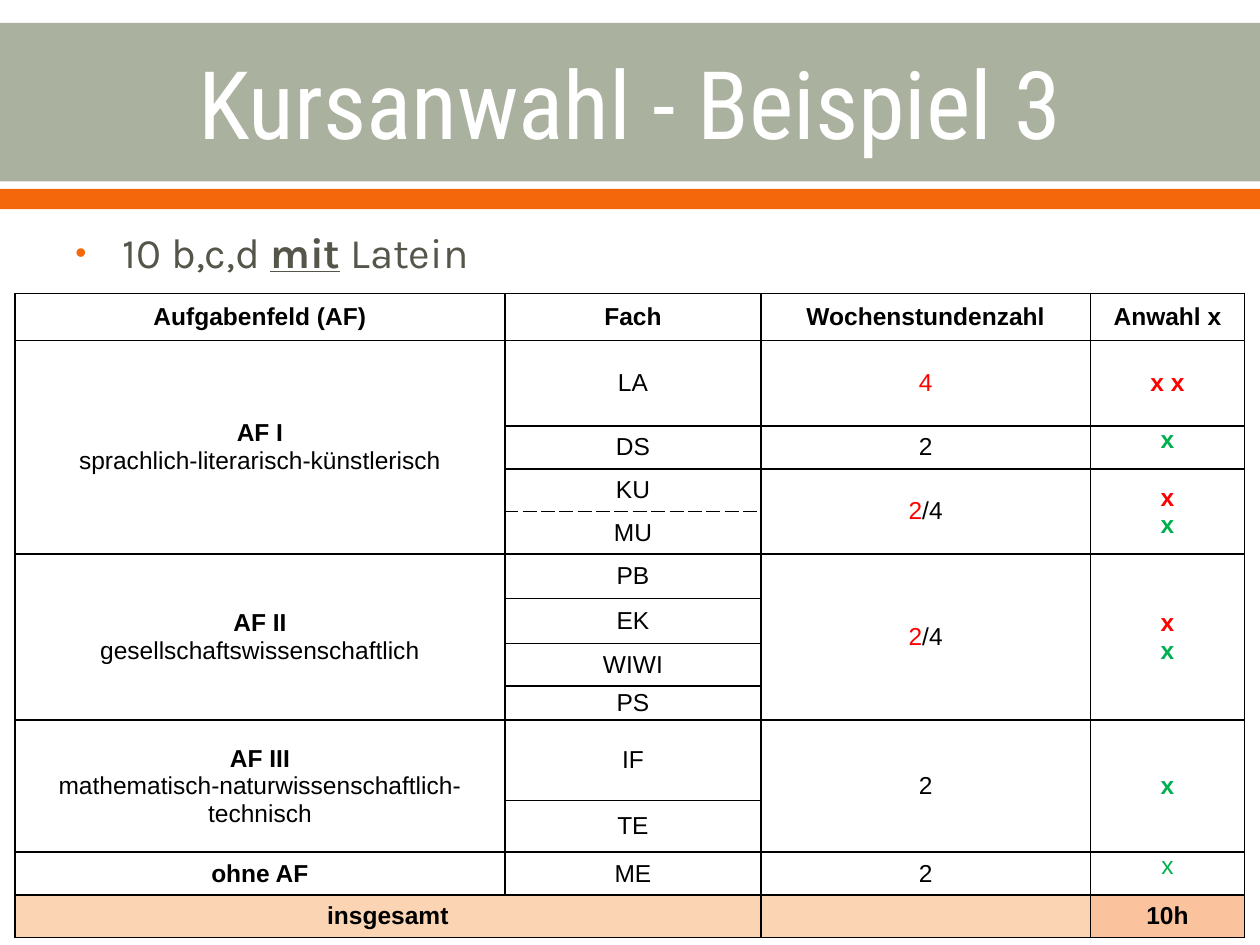
from lxml import etree
from pptx import Presentation
from pptx.dml.color import RGBColor
from pptx.enum.shapes import MSO_SHAPE
from pptx.enum.text import MSO_ANCHOR, PP_ALIGN
from pptx.oxml.ns import qn
from pptx.util import Cm, Pt

RECT = MSO_SHAPE.RECTANGLE
TOP, MIDDLE = MSO_ANCHOR.TOP, MSO_ANCHOR.MIDDLE
LEFT, CENTER = PP_ALIGN.LEFT, PP_ALIGN.CENTER

THEME = {
    "band": "ABB19F", "accent": "F4680B", "title": "FFFFFF", "body": "55554A",
    "text": "000000", "red": "FF0000", "green": "00B050",
    "total": "FBD4B4", "hours": "FBC39D",
    "title_font": "Roboto Condensed", "body_font": "Karla", "table_font": "Arial",
    "title_size": 54, "body_size": 24, "table_size": 14, "border": 1,
}

# A paragraph is a list of (text, format) runs.
PLAIN, BOLD = {}, {"bold": True}
RED = {"color": "red"}
RED_X = ("x", {"color": "red", "bold": True})
GREEN_X = ("x", {"color": "green", "bold": True})

TITLE = "Kursanwahl - Beispiel 3"
CLASSES = [("10 b,c,d ", PLAIN), ("mit", {"bold": True, "underline": True}), (" Latein", PLAIN)]

HEADERS = ["Aufgabenfeld (AF)", "Fach", "Wochenstundenzahl", "Anwahl x"]
SUBJECTS = ["LA", "DS", "KU", "MU", "PB", "EK", "WIWI", "PS", "IF", "TE", "ME"]
# (first row, row span, paragraphs)
FIELDS = [
    (1, 4, [[("AF I", BOLD)], [("sprachlich-literarisch-künstlerisch", PLAIN)]]),
    (5, 4, [[("AF II", BOLD)], [("gesellschaftswissenschaftlich", PLAIN)]]),
    (9, 2, [[("AF III", BOLD)], [("mathematisch-naturwissenschaftlich-", PLAIN)],
            [("technisch", PLAIN)]]),
    (11, 1, [[("ohne AF", BOLD)]]),
]
# (first row, row span, weekly hours, choice paragraphs, choice anchor)
TWO_OR_FOUR = [("2", RED), ("/4", PLAIN)]
CHOICES = [
    (1, 1, [("4", RED)], [[("x x", {"color": "red", "bold": True})]], MIDDLE),
    (2, 1, [("2", PLAIN)], [[GREEN_X]], TOP),
    (3, 2, TWO_OR_FOUR, [[RED_X], [GREEN_X]], MIDDLE),
    (5, 4, TWO_OR_FOUR, [[RED_X], [GREEN_X]], MIDDLE),
    (9, 2, [("2", PLAIN)], [[GREEN_X]], MIDDLE),
    (11, 1, [("2", PLAIN)], [[("x", {"color": "green"})]], TOP),
]
TOTAL_ROW = 12
DASHED = {(3, 1): "lnB", (4, 1): "lnT"}

COL_WIDTHS = [9.88, 5.16, 6.64, 3.11]
ROW_HEIGHTS = [0.94, 1.73, 0.86, 0.86, 0.86, 0.9, 0.9, 0.86, 0.69, 1.62, 1.04, 0.86, 0.86]


def rgb(name):
    return RGBColor.from_string(THEME[name])


def write(tf, paragraphs, role="table", color="text", align=CENTER, anchor=MIDDLE):
    tf.word_wrap = True
    tf.vertical_anchor = anchor
    for i, runs in enumerate(paragraphs):
        p = tf.add_paragraph() if i else tf.paragraphs[0]
        p.alignment = align
        for text, fmt in runs:
            r = p.add_run()
            r.text = text
            r.font.name = THEME[role + "_font"]
            r.font.size = Pt(THEME[role + "_size"])
            r.font.bold = fmt.get("bold", False)
            r.font.underline = fmt.get("underline", False)
            r.font.color.rgb = rgb(fmt.get("color", color))


def add_band(slide, top, height, color):
    sp = slide.shapes.add_shape(RECT, 0, Cm(top), Cm(25.4), Cm(height))
    sp.shadow.inherit = False
    sp.fill.solid()
    sp.fill.fore_color.rgb = rgb(color)
    sp.line.fill.background()


def add_bullet(p):
    pPr = p._p.get_or_add_pPr()
    pPr.set("marL", str(Cm(0.95)))
    pPr.set("indent", str(-Cm(0.95)))
    color = etree.SubElement(pPr, qn("a:buClr"))
    etree.SubElement(color, qn("a:srgbClr"), val=THEME["accent"])
    etree.SubElement(pPr, qn("a:buSzPct"), val="75000")
    etree.SubElement(pPr, qn("a:buFont"), typeface="Arial")
    etree.SubElement(pPr, qn("a:buChar"), char="•")


def add_borders(cell, dashed_side):
    tcPr = cell._tc.get_or_add_tcPr()
    for i, side in enumerate(("lnL", "lnR", "lnT", "lnB")):
        ln = etree.Element(qn("a:" + side), w=str(Pt(THEME["border"])))
        fill = etree.SubElement(ln, qn("a:solidFill"))
        etree.SubElement(fill, qn("a:srgbClr"), val=THEME["text"])
        dash = "dash" if side == dashed_side else "solid"
        etree.SubElement(ln, qn("a:prstDash"), val=dash)
        tcPr.insert(i, ln)


def format_cells(table):
    for row in range(len(ROW_HEIGHTS)):
        for col in range(len(COL_WIDTHS)):
            cell = table.cell(row, col)
            cell.margin_left = cell.margin_right = Cm(0.18)
            cell.margin_top = cell.margin_bottom = 0
            if row == TOTAL_ROW:
                cell.fill.solid()
                cell.fill.fore_color.rgb = rgb("hours" if col == 3 else "total")
            else:
                cell.fill.background()
            add_borders(cell, DASHED.get((row, col)))
            p = cell.text_frame.paragraphs[0]
            if not p.runs:
                size = str(THEME["table_size"] * 100)
                etree.SubElement(p._p, qn("a:endParaRPr"), sz=size)


def fill_cell(table, row, col, paragraphs, rows=1, cols=1, anchor=MIDDLE):
    cell = table.cell(row, col)
    if rows * cols > 1:
        cell.merge(table.cell(row + rows - 1, col + cols - 1))
    write(cell.text_frame, paragraphs)
    cell.vertical_anchor = anchor


def add_course_table(slide):
    frame = slide.shapes.add_table(
        len(ROW_HEIGHTS), len(COL_WIDTHS), Cm(0.3), Cm(5.92),
        Cm(sum(COL_WIDTHS)), Cm(sum(ROW_HEIGHTS)))
    table = frame.table
    table.first_row = table.horz_banding = False
    for column, width in zip(table.columns, COL_WIDTHS):
        column.width = Cm(width)
    for row, height in zip(table.rows, ROW_HEIGHTS):
        row.height = Cm(height)

    for col, header in enumerate(HEADERS):
        fill_cell(table, 0, col, [[(header, BOLD)]])
    for row, subject in enumerate(SUBJECTS, 1):
        fill_cell(table, row, 1, [[(subject, PLAIN)]])
    for row, span, paragraphs in FIELDS:
        fill_cell(table, row, 0, paragraphs, rows=span)
    for row, span, hours, choice, anchor in CHOICES:
        fill_cell(table, row, 2, [hours], rows=span)
        fill_cell(table, row, 3, choice, rows=span, anchor=anchor)
    fill_cell(table, TOTAL_ROW, 0, [[("insgesamt", BOLD)]], cols=2)
    fill_cell(table, TOTAL_ROW, 3, [[("10h", BOLD)]])
    format_cells(table)


def main():
    prs = Presentation()
    prs.slide_width, prs.slide_height = Cm(25.4), Cm(19.05)
    s = prs.slides.add_slide(prs.slide_layouts[5])

    add_band(s, 0.46, 3.2, "band")
    add_band(s, 3.81, 0.41, "accent")

    title = s.shapes.title
    s.shapes._spTree.append(title._element)  # in front of the bands
    title.left, title.top, title.width, title.height = Cm(1.27), Cm(0.5), Cm(22.86), Cm(3.1)
    write(title.text_frame, [[(TITLE, PLAIN)]], role="title", color="title")

    box = s.shapes.add_textbox(Cm(1.27), Cm(4.45), Cm(22.86), Cm(1.47))
    write(box.text_frame, [CLASSES], role="body", color="body", align=LEFT, anchor=TOP)
    p = box.text_frame.paragraphs[0]
    p.space_before = Pt(4.8)
    add_bullet(p)

    add_course_table(s)
    prs.save("out.pptx")


if __name__ == "__main__":
    main()
